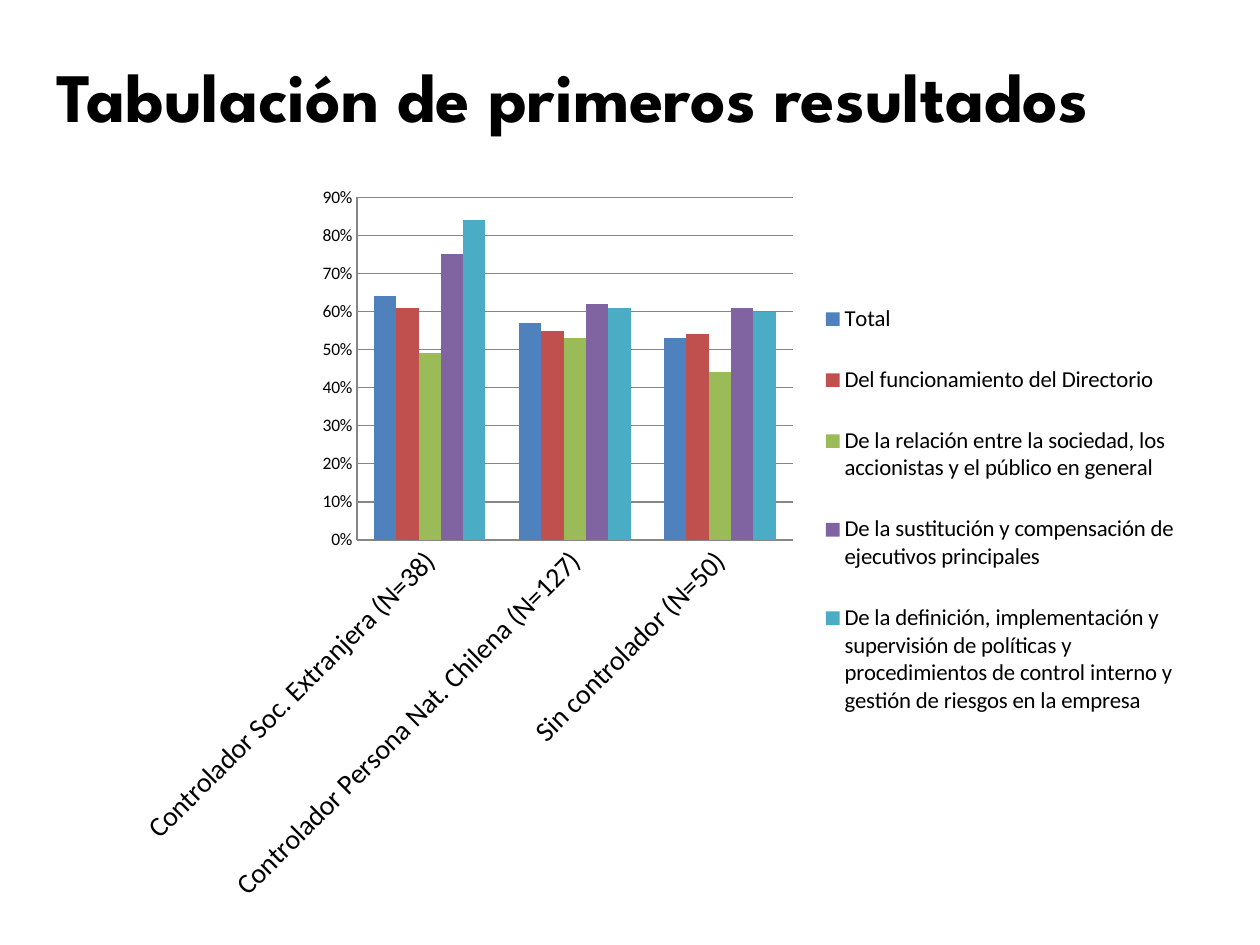
from lxml import etree
from pptx import Presentation
from pptx.chart.data import CategoryChartData
from pptx.dml.color import RGBColor
from pptx.enum import chart as kinds, text
from pptx.oxml.ns import qn
from pptx.util import Inches, Pt

HUES = {"ink": "000000", "axis": "868686", "blue": "4F81BD", "red": "C0504D",
        "green": "9BBB59", "violet": "8064A2", "teal": "4BACC6"}

GROUPS = ["Controlador Soc. Extranjera (N=38)",
          "Controlador Persona Nat. Chilena (N=127)",
          "Sin controlador (N=50)"]

SERIES = [
    ("Total", "blue", (0.64, 0.57, 0.53)),
    ("Del funcionamiento del Directorio", "red", (0.61, 0.55, 0.54)),
    ("De la relación entre la sociedad, los accionistas y el público en general",
     "green", (0.49, 0.53, 0.44)),
    ("De la sustitución y compensación de ejecutivos principales",
     "violet", (0.75, 0.62, 0.61)),
    ("De la definición, implementación y supervisión de políticas y "
     "procedimientos de control interno y gestión de riesgos en la empresa",
     "teal", (0.84, 0.61, 0.60)),
]


def hue(name):
    return RGBColor.from_string(HUES[name])


def place(part, index, area, inner=False):
    """Fix a chart part at x, y, w, h, as fractions of the chart."""
    for old in part.findall(qn("c:layout")):
        part.remove(old)
    layout = etree.Element(qn("c:layout"))
    manual = etree.SubElement(layout, qn("c:manualLayout"))
    rules = [("layoutTarget", "inner")] if inner else []
    rules += [("xMode", "edge"), ("yMode", "edge")]
    rules += zip("xywh", map(str, area))
    for tag, val in rules:
        etree.SubElement(manual, qn("c:" + tag)).set("val", val)
    part.insert(index, layout)


class Deck:
    head, body = "League Spartan", "Calibri"

    def __init__(self, wide, high):
        self.file = Presentation()
        self.file.slide_width, self.file.slide_height = Inches(wide), Inches(high)
        self.slide = self.file.slides.add_slide(self.file.slide_layouts[5])

    def style(self, font, size, face=None):
        font.name, font.size = face or self.body, Pt(size)
        font.color.rgb = hue("ink")

    def title(self, words, *box):
        shape = self.slide.shapes.title
        shape.left, shape.top, shape.width, shape.height = map(Inches, box)
        frame = shape.text_frame
        frame.text = words
        frame.vertical_anchor = text.MSO_ANCHOR.MIDDLE
        line = frame.paragraphs[0]
        line.alignment = text.PP_ALIGN.LEFT
        self.style(line.font, 39.6, self.head)
        line.font.bold = True

    def columns(self, groups, series, *box):
        data = CategoryChartData(number_format="0%")
        data.categories = groups
        for name, _, vals in series:
            data.add_series(name, vals)
        chart = self.slide.shapes.add_chart(
            kinds.XL_CHART_TYPE.COLUMN_CLUSTERED, *map(Inches, box), data).chart
        chart.has_title = False
        self.style(chart.font, 10)
        plot = chart.plots[0]
        plot.gap_width, plot.overlap, plot.vary_by_categories = 150, 0, False
        for bars, (_, shade, _) in zip(plot.series, series):
            bars.format.fill.solid()
            bars.format.fill.fore_color.rgb = hue(shade)
        self.axes(chart)
        self.legend(chart)
        place(chart.plots[0]._element.getparent(), 0, (0.22, 0.03, 0.41, 0.46), True)

    def axes(self, chart):
        cats, vals = chart.category_axis, chart.value_axis
        vals.minimum_scale, vals.maximum_scale, vals.major_unit = 0, 0.9, 0.1
        vals.has_major_gridlines = True
        vals.tick_labels.number_format = "0%"
        vals.tick_labels.number_format_is_linked = False
        for axis, size in ((cats, 16), (vals, 10)):
            axis.major_tick_mark = axis.minor_tick_mark = kinds.XL_TICK_MARK.NONE
            self.style(axis.tick_labels.font, size)
        for rule in (cats, vals, vals.major_gridlines):
            rule.format.line.color.rgb = hue("axis")
            rule.format.line.width = Pt(0.75)
        slant = cats._element.find(qn("c:txPr")).find(qn("a:bodyPr"))
        slant.set("rot", str(-45 * 60000))
        slant.set("vert", "horz")

    def legend(self, chart):
        chart.has_legend = True
        key = chart.legend
        key.position = kinds.XL_LEGEND_POSITION.RIGHT
        key.include_in_layout = False
        self.style(key.font, 13)
        place(key._element, 1, (0.65, 0.13, 0.35, 0.64))


def main():
    deck = Deck(10, 7.5)
    deck.columns(GROUPS, SERIES, 0.98, 1.39, 8.43, 5.91)
    deck.title("Tabulación de primeros resultados", 0.35, 0.13, 9.5, 1.25)
    deck.file.save("out.pptx")


if __name__ == "__main__":
    main()
